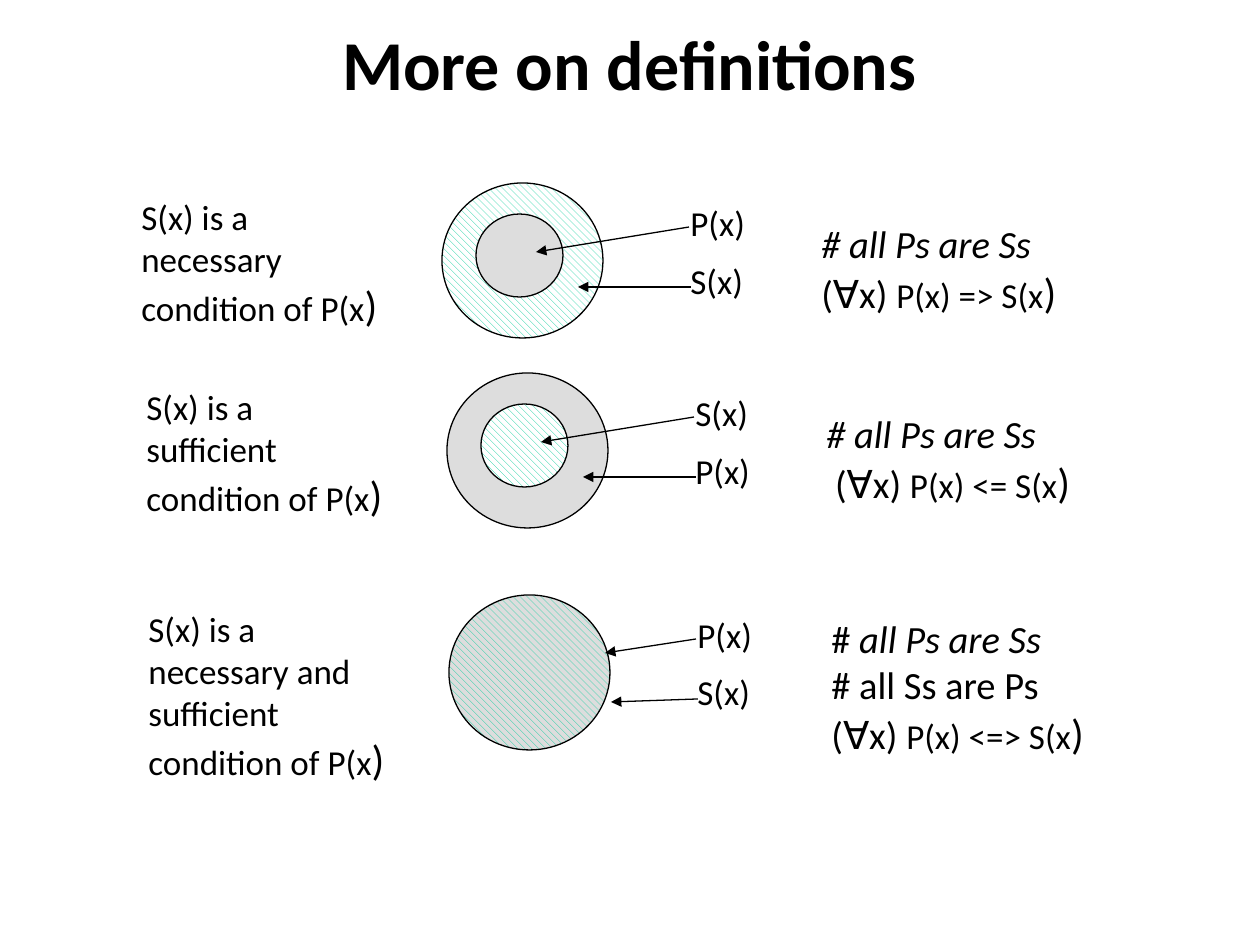
from pptx import Presentation
from pptx.dml.color import RGBColor
from pptx.enum.dml import MSO_PATTERN
from pptx.enum.shapes import MSO_CONNECTOR, MSO_SHAPE
from pptx.enum.text import MSO_ANCHOR, PP_ALIGN
from pptx.oxml.ns import qn
from pptx.util import Emu, Pt
from lxml import etree

OVAL = MSO_SHAPE.OVAL
STRAIGHT = MSO_CONNECTOR.STRAIGHT
HATCH = MSO_PATTERN.WIDE_DOWNWARD_DIAGONAL
TOP, MIDDLE = MSO_ANCHOR.TOP, MSO_ANCHOR.MIDDLE
LEFT, CENTER = PP_ALIGN.LEFT, PP_ALIGN.CENTER

THEME = {
    "font": "Calibri",
    "ink": RGBColor(0x00, 0x00, 0x00),
    "gray": RGBColor(0xDD, 0xDD, 0xDD),
    "white": RGBColor(0xFF, 0xFF, 0xFF),
    "green": RGBColor(0x00, 0xCC, 0x99),
    "title": 40,
    "body": 20,
    "formula": 22,
    "paren": 24,
    "gap": Pt(9),
    "line": Pt(0.75),
}
PX = 914400 / 126
BODY, FORMULA, PAREN = THEME["body"], THEME["formula"], THEME["paren"]


def px(*values):
    return [Emu(round(v * PX)) for v in values]


def add_text(box, paragraphs, align=LEFT, anchor=TOP, bold=False):
    tf = s.shapes.add_textbox(*px(*box)).text_frame
    tf.word_wrap = True
    tf.vertical_anchor = anchor
    for i, runs in enumerate(paragraphs):
        p = tf.paragraphs[0] if i == 0 else tf.add_paragraph()
        p.alignment = align
        if i:
            p.space_before = THEME["gap"]
        for text, size, italic in runs:
            if text == "\n":
                p.add_line_break()
                p._p[-1].get_or_add_rPr().set("sz", str(size * 100))
                continue
            r = p.add_run()
            r.text = text
            r.font.name = THEME["font"]
            r.font.size = Pt(size)
            r.font.bold = bold
            r.font.italic = italic
            r.font.color.rgb = THEME["ink"]


prs = Presentation()
prs.slide_width, prs.slide_height = px(1260, 945)
s = prs.slides.add_slide(prs.slide_layouts[6])

add_text((94, 21, 1071, 84), [[("More on definitions", THEME["title"], False)]],
         CENTER, MIDDLE, True)

BREAK = ("\n", FORMULA, False)
ALL_PS = ("all Ps are Ss", FORMULA, True)
OUTER, INNER = (442, 183, 161, 155), (476, 214, 87, 83)
NESTED_TIPS = [(536, 252), (578, 287)]

rows = [
    {"dx": 0, "dy": 0, "condition": "necessary", "height": 149,
     "circles": [(OUTER, "white"), (INNER, None)],
     "labels": ["P(x)", "S(x)"], "tips": NESTED_TIPS,
     "box": (809, 214, 321, 111),
     "rule": [("# ", FORMULA, True), ALL_PS, BREAK, ("(∀x) ", FORMULA, False)],
     "relation": "P(x) => S(x"},
    {"dx": 5, "dy": 190, "condition": "sufficient", "height": 149,
     "circles": [(OUTER, None), (INNER, "white")],
     "labels": ["S(x)", "P(x)"], "tips": NESTED_TIPS,
     "box": (814, 404, 309, 111),
     "rule": [("# ", FORMULA, True), ALL_PS, BREAK, (" (∀x) ", FORMULA, False)],
     "relation": "P(x) <= S(x"},
    {"dx": 7, "dy": 412, "condition": "necessary and sufficient", "height": 189,
     "circles": [(OUTER, "gray")],
     "labels": ["P(x)", "S(x)"], "tips": [(598, 241), (604, 290)],
     "box": (819, 609, 360, 158),
     "rule": [("# ", FORMULA, False), ALL_PS, BREAK,
              ("# all Ss are Ps", FORMULA, False), BREAK, ("(∀x) ", FORMULA, False)],
     "relation": "P(x) <=> S(x"},
]

for row in rows:
    dx, dy = row["dx"], row["dy"]

    for (x, y, w, h), hatch_back in row["circles"]:
        sp = s.shapes.add_shape(OVAL, *px(x + dx, y + dy, w, h))
        sp.shadow.inherit = False
        if hatch_back:
            sp.fill.patterned()
            sp.fill.pattern = HATCH
            sp.fill.fore_color.rgb = THEME["green"]
            sp.fill.back_color.rgb = THEME[hatch_back]
        else:
            sp.fill.solid()
            sp.fill.fore_color.rgb = THEME["gray"]
        sp.line.color.rgb = THEME["ink"]
        sp.line.width = THEME["line"]

    add_text((678 + dx, 195 + dy, 130, 117),
             [[(label, BODY, False)] for label in row["labels"]])

    for (x1, y1), (x2, y2) in zip([(689, 227), (691, 287)], row["tips"]):
        line = s.shapes.add_connector(
            STRAIGHT, *px(x1 + dx, y1 + dy, x2 + dx, y2 + dy))
        line.line.color.rgb = THEME["ink"]
        line.line.width = THEME["line"]
        etree.SubElement(line.line._get_or_add_ln(), qn("a:tailEnd"), type="triangle")
        etree.SubElement(line._element.spPr, qn("a:effectLst"))

    closing = (")", PAREN, False)
    sentence = f"S(x) is a {row['condition']} condition of P(x"
    add_text((129 + dx, 189 + dy, 267, row["height"]),
             [[(sentence, BODY, False), closing]])
    add_text(row["box"], [row["rule"] + [(row["relation"], BODY, False), closing]])

prs.save("out.pptx")
